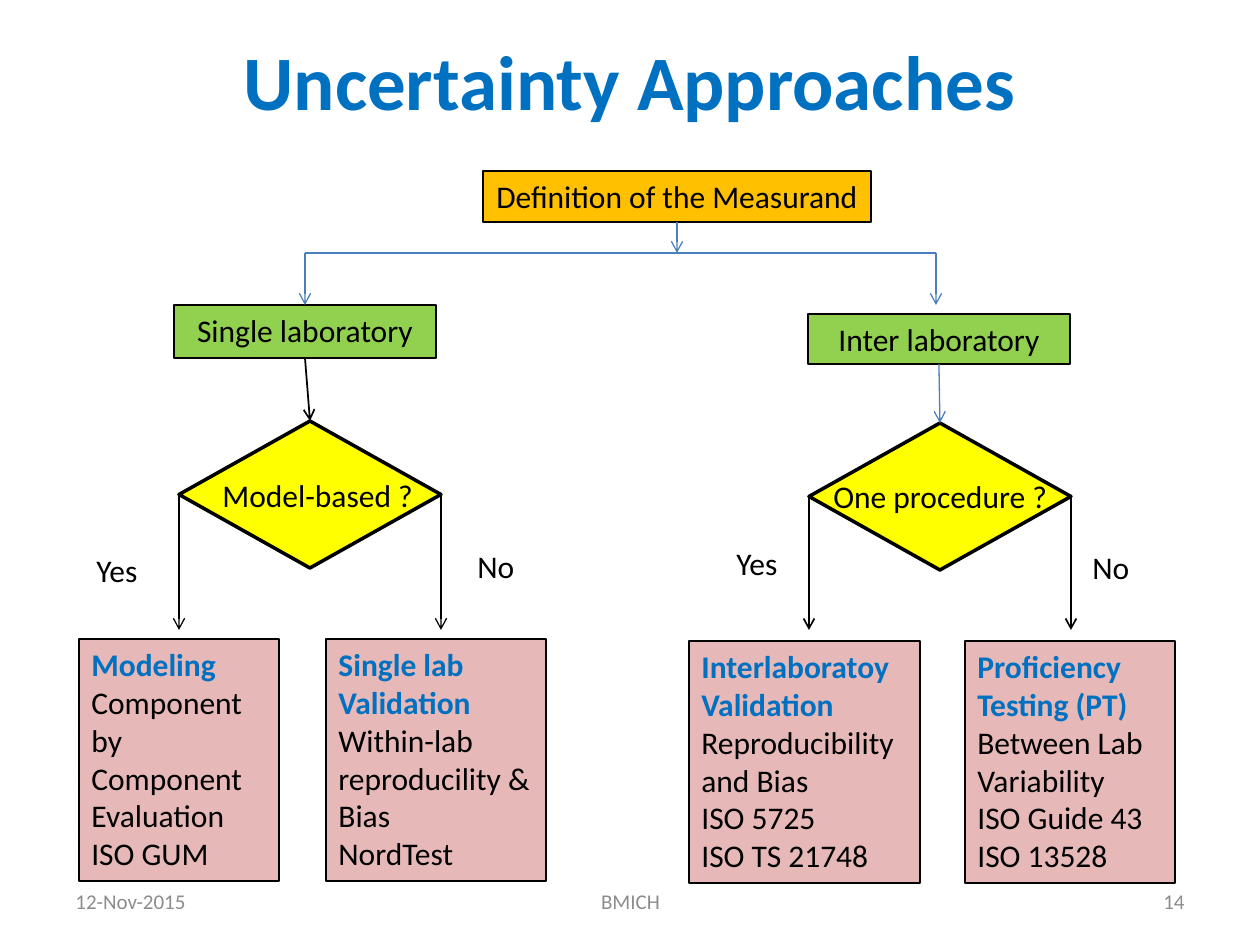
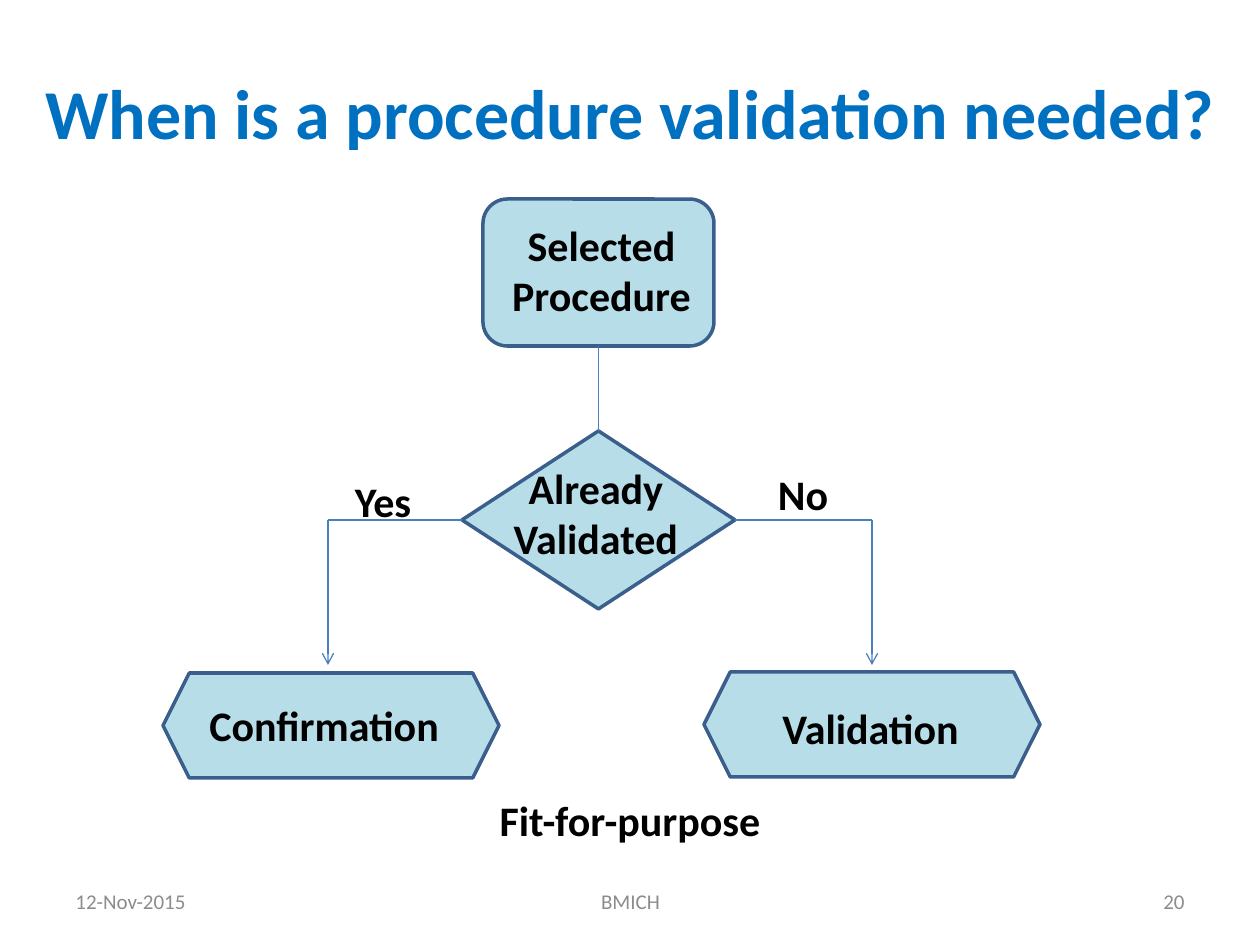
from lxml import etree
from pptx import Presentation
from pptx.dml.color import RGBColor
from pptx.enum.shapes import MSO_CONNECTOR, MSO_SHAPE
from pptx.enum.text import MSO_ANCHOR, MSO_AUTO_SIZE, PP_ALIGN
from pptx.oxml.ns import qn
from pptx.util import Pt

PX = 7257  # EMU in one px, 126 px to the inch
FONT = "Calibri"
HEADING_BLUE = "0070C0"
BLACK = "000000"
FOOTER_GREY = "8C8C8C"
LINE_BLUE = "4B7EBC"
ORANGE, GREEN, YELLOW, PINK = "FFC000", "92D050", "FFFF00", "E6B9B8"
PALE_BLUE, OUTLINE_BLUE = "B7DEE8", "3A5F8C"
LEFT, CENTER, RIGHT = PP_ALIGN.LEFT, PP_ALIGN.CENTER, PP_ALIGN.RIGHT
rgb = RGBColor.from_string


def add_box(slide, at, lines=(), kind=None, fill=None, outline=BLACK, weight=1, size=18,
            bold=False, color=BLACK, align=LEFT, anchor=MSO_ANCHOR.TOP):
    """Add a filled shape, or a bare text box when kind is None, with one paragraph a line."""
    place = [value * PX for value in at]
    if kind is None:
        box = slide.shapes.add_textbox(*place)
    else:
        box = slide.shapes.add_shape(kind, *place)
        box.shadow.inherit = False
        box.fill.solid()
        box.fill.fore_color.rgb = rgb(fill)
        box.line.color.rgb = rgb(outline)
        box.line.width = Pt(weight)
    frame = box.text_frame
    frame.word_wrap = True
    frame.vertical_anchor = anchor
    frame.text = "\n".join(lines)
    for paragraph in frame.paragraphs:
        paragraph.alignment = align
        paragraph.font.name = FONT
        paragraph.font.size = Pt(size)
        paragraph.font.bold = bold
        paragraph.font.color.rgb = rgb(color)
    return box


def connect(slide, start, end, color=LINE_BLUE, weight=0.75, arrow=True):
    """Draw a line; each end is an (x, y) point or a (shape, connection site) pair."""
    line = slide.shapes.add_connector(MSO_CONNECTOR.STRAIGHT, 0, 0, 0, 0)
    if isinstance(start[0], int):
        line.begin_x, line.begin_y = start[0] * PX, start[1] * PX
    else:
        line.begin_connect(*start)
    if isinstance(end[0], int):
        line.end_x, line.end_y = end[0] * PX, end[1] * PX
    else:
        line.end_connect(*end)
    line.line.color.rgb = rgb(color)
    line.line.width = Pt(weight)
    if arrow:
        outline = line.line._get_or_add_ln()
        etree.SubElement(outline, qn("a:tailEnd"), type="arrow")
    etree.SubElement(line._element.spPr, qn("a:effectLst"))


prs = Presentation()
prs.slide_width, prs.slide_height = 1260 * PX, 945 * PX

# Titles and footers
slides = []
for heading, size, place, number in [
    ("Uncertainty Approaches", 44, (63, 1, 1134, 158), "14"),
    ("When is a procedure validation needed?", 40, (31, 63, 1198, 97), "20"),
]:
    slide = prs.slides.add_slide(prs.slide_layouts[5])
    slides.append(slide)
    title = slide.shapes.title
    title.left, title.top, title.width, title.height = [value * PX for value in place]
    title.text_frame.text = heading
    title.text_frame.auto_size = MSO_AUTO_SIZE.NONE
    title.text_frame.vertical_anchor = MSO_ANCHOR.MIDDLE
    title_line = title.text_frame.paragraphs[0]
    title_line.alignment = CENTER
    title_line.font.name = FONT
    title_line.font.size = Pt(size)
    title_line.font.bold = True
    title_line.font.color.rgb = rgb(HEADING_BLUE)
    for x, width, text, align in [
        (63, 294, "12-Nov-2015", LEFT),
        (431, 399, "BMICH", CENTER),
        (903, 294, number, RIGHT),
    ]:
        add_box(slide, (x, 876, width, 50), [text], size=12, color=FOOTER_GREY,
                align=align, anchor=MSO_ANCHOR.MIDDLE)

approaches, validation = slides

# Uncertainty approaches: from the measurand to two kinds of laboratory
measurand = add_box(approaches, (483, 171, 388, 51), ["Definition of the Measurand"],
                    MSO_SHAPE.RECTANGLE, ORANGE, align=CENTER)
single_lab = add_box(approaches, (174, 305, 262, 53), ["Single laboratory"],
                     MSO_SHAPE.RECTANGLE, GREEN, align=CENTER)
inter_lab = add_box(approaches, (808, 314, 262, 50), ["Inter laboratory"],
                    MSO_SHAPE.RECTANGLE, GREEN, align=CENTER)
model_based = add_box(approaches, (179, 421, 262, 147), (), MSO_SHAPE.DIAMOND, YELLOW, weight=2)
one_procedure = add_box(approaches, (809, 423, 262, 147), (), MSO_SHAPE.DIAMOND, YELLOW, weight=2)

for at, text in [
    ((210, 470, 231, 50), "Model-based ?"),
    ((821, 471, 252, 50), "One procedure ?"),
    ((84, 545, 73, 50), "Yes"),
    ((465, 541, 94, 50), "No"),
    ((724, 538, 73, 50), "Yes"),
    ((1080, 542, 94, 50), "No"),
]:
    add_box(approaches, at, [text])

for x, y, width, heading_lines, lines in [
    (79, 639, 200, 1, ["Modeling", "Component by Component Evaluation", "ISO GUM"]),
    (326, 639, 220, 2, ["Single lab", "Validation", "Within-lab reproducility & Bias",
                        "NordTest"]),
    (689, 641, 231, 1, ["Interlaboratoy Validation", "Reproducibility and Bias",
                        "ISO 5725", "ISO TS 21748"]),
    (965, 641, 210, 1, ["Proficiency Testing (PT)", "Between Lab Variability",
                        "ISO Guide 43", "ISO 13528"]),
]:
    method = add_box(approaches, (x, y, width, 242), lines, MSO_SHAPE.RECTANGLE, PINK)
    for paragraph in method.text_frame.paragraphs[:heading_lines]:
        paragraph.font.bold = True
        paragraph.font.color.rgb = rgb(HEADING_BLUE)

connect(approaches, (measurand, 2), (677, 253))
connect(approaches, (305, 253), (936, 253), arrow=False)
connect(approaches, (305, 253), (single_lab, 0))
connect(approaches, (936, 253), (936, 305))
connect(approaches, (single_lab, 2), (model_based, 0), BLACK, 1)
connect(approaches, (inter_lab, 2), (one_procedure, 0))
for decision, left, right, weight in [(model_based, 179, 441, 0.75), (one_procedure, 809, 1071, 1)]:
    connect(approaches, (decision, 1), (left, 630), BLACK, weight)
    connect(approaches, (decision, 3), (right, 630), BLACK, weight)

# Validation decision: one procedure, one question, two outcomes
steps = [
    add_box(validation, at, (), kind, PALE_BLUE, OUTLINE_BLUE, 2)
    for kind, at in [
        (MSO_SHAPE.ROUNDED_RECTANGLE, (483, 199, 231, 147)),
        (MSO_SHAPE.DIAMOND, (462, 431, 273, 178)),
        (MSO_SHAPE.HEXAGON, (163, 673, 336, 105)),
        (MSO_SHAPE.HEXAGON, (704, 672, 336, 105)),
    ]
]
procedure, already_validated = steps[:2]

connect(validation, (procedure, 2), (already_validated, 0), arrow=False)
for site, x in [(1, 328), (3, 872)]:
    connect(validation, (already_validated, site), (x, 520), arrow=False)
    connect(validation, (x, 520), (x, 665))

for at, text, align in [
    ((491, 213, 221, 115), "Selected Procedure", CENTER),
    ((475, 456, 242, 115), "Already Validated", CENTER),
    ((197, 693, 263, 63), "Confirmation", LEFT),
    ((770, 696, 242, 63), "Validation", LEFT),
    ((420, 788, 420, 63), "Fit-for-purpose", CENTER),
    ((336, 469, 94, 63), "Yes", CENTER),
    ((756, 462, 94, 63), "No", CENTER),
]:
    add_box(validation, at, [text], size=24, bold=True, align=align)

prs.save("out.pptx")
